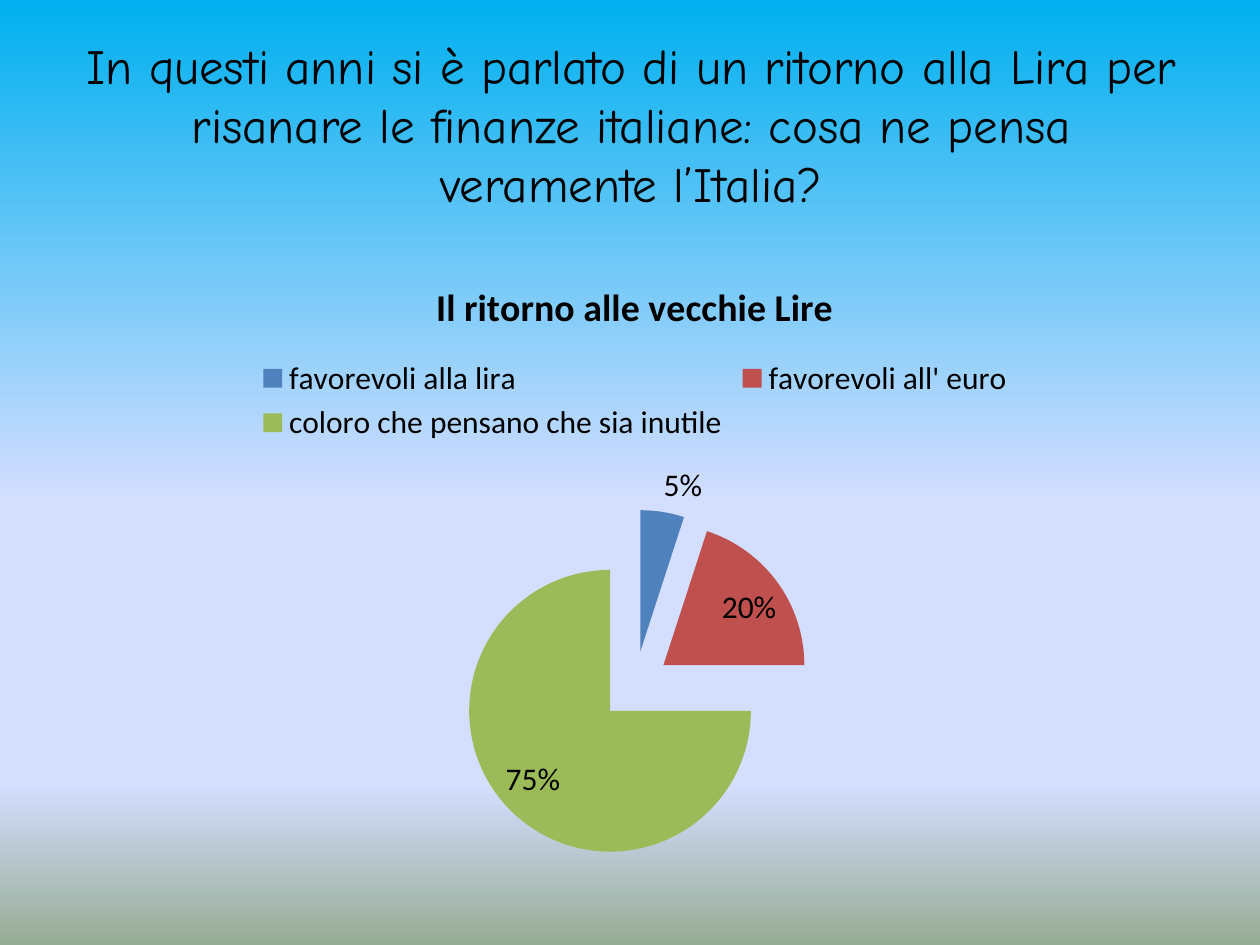
from dataclasses import dataclass

from lxml import etree
from pptx import Presentation
from pptx.chart.data import CategoryChartData
from pptx.dml.color import RGBColor
from pptx.enum import chart as ch, text
from pptx.oxml import ns
from pptx.util import Inches, Pt


@dataclass(frozen=True)
class Theme:
    ink: RGBColor = RGBColor(0, 0, 0)
    head: str = "Comic Neue"
    body: str = "Calibri"
    head_size: float = 28
    name_size: float = 21.6
    body_size: float = 18
    sky: tuple = ((0, "00B0F0"), (53, "D4DEFF"), (83, "D4DEFF"), (100, "96AB94"))


@dataclass(frozen=True)
class Slice:
    label: str
    share: int
    color: str


THEME = Theme()
SLICES = (
    Slice("favorevoli alla lira", 5, "4F81BD"),
    Slice("favorevoli all' euro", 20, "C0504D"),
    Slice("coloro che pensano che sia inutile", 75, "9BBB59"),
)


def style(font, name: str, size: float) -> None:
    font.name, font.size = name, Pt(size)
    font.color.rgb = THEME.ink


def paint_sky(slide) -> None:
    """Fill the background from top to bottom with all the theme's stops."""
    fill = slide.background.fill
    fill.gradient()
    fill.gradient_angle = 270
    stops = slide._element.xpath(".//a:gsLst")[0]
    for old in list(stops):
        stops.remove(old)
    for pos, color in THEME.sky:
        stop = etree.SubElement(stops, ns.qn("a:gs"), pos=str(pos * 1000))
        etree.SubElement(stop, ns.qn("a:srgbClr"), val=color)


def add_title(slide, words: str) -> None:
    title = slide.shapes.title
    title.left, title.top = Inches(0.51), Inches(0.36)
    title.width, title.height = Inches(9), Inches(1.25)
    frame = title.text_frame
    frame.text = words
    frame.word_wrap = True
    frame.vertical_anchor = text.MSO_ANCHOR.MIDDLE
    para = frame.paragraphs[0]
    para.alignment = text.PP_ALIGN.CENTER
    style(para.font, THEME.head, THEME.head_size)


def explode(series, gap: int) -> None:
    """Pull every slice out by a percentage of the radius."""
    node = etree.Element(ns.qn("c:explosion"), val=str(gap))
    series._element.find(ns.qn("c:tx")).addnext(node)


def add_pie(slide, name: str, slices: tuple[Slice, ...]) -> None:
    data = CategoryChartData()
    data.categories = [s.label for s in slices]
    data.add_series("Series 1", [s.share for s in slices])
    chart = slide.shapes.add_chart(
        ch.XL_CHART_TYPE.PIE, Inches(0.51), Inches(2.02),
        Inches(9.06), Inches(4.96), data).chart
    style(chart.font, THEME.body, THEME.body_size)

    chart.has_title = True
    chart.chart_title.text_frame.text = name
    font = chart.chart_title.text_frame.paragraphs[0].font
    style(font, THEME.body, THEME.name_size)
    font.bold = True

    chart.has_legend = True
    chart.legend.position = ch.XL_LEGEND_POSITION.TOP
    chart.legend.include_in_layout = False

    plot = chart.plots[0]
    plot.vary_by_categories = True
    series = plot.series[0]
    explode(series, 25)
    for i, part in enumerate(slices):
        fill = series.points[i].format.fill
        fill.solid()
        fill.fore_color.rgb = RGBColor.from_string(part.color)

    plot.has_data_labels = True
    labels = plot.data_labels
    labels.show_percentage, labels.show_value = True, False
    labels.number_format, labels.number_format_is_linked = "0%", False
    labels.position = ch.XL_LABEL_POSITION.BEST_FIT
    style(labels.font, THEME.body, THEME.body_size)


def main() -> None:
    deck = Presentation()
    deck.slide_width, deck.slide_height = Inches(10), Inches(7.5)
    slide = deck.slides.add_slide(deck.slide_layouts[5])
    paint_sky(slide)
    add_title(slide, "In questi anni si è parlato di un ritorno alla Lira per "
                     "risanare le finanze italiane: cosa ne pensa veramente l’Italia?")
    add_pie(slide, "Il ritorno alle vecchie Lire", SLICES)
    deck.save("out.pptx")


if __name__ == "__main__":
    main()
